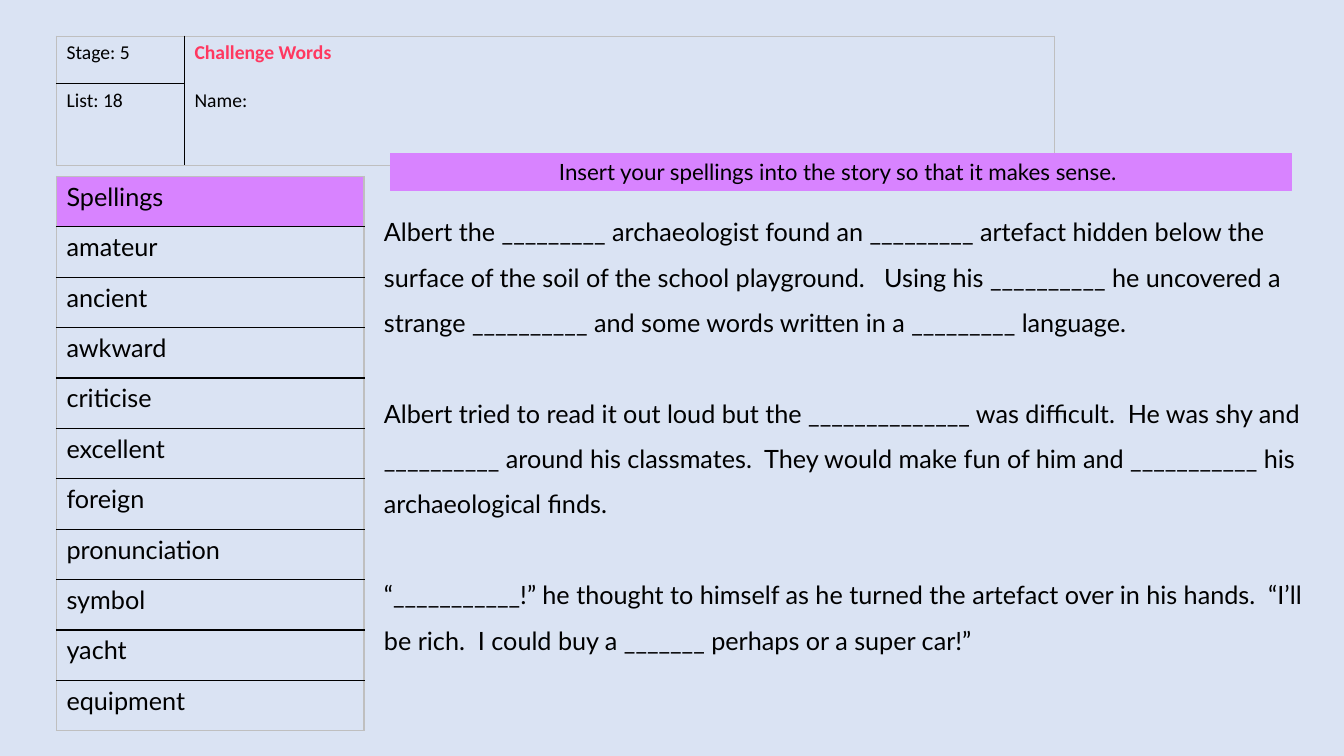
from lxml.etree import SubElement
from pptx import Presentation
from pptx.dml.color import RGBColor
from pptx.enum.shapes import MSO_SHAPE as Shape
from pptx.enum.text import MSO_ANCHOR as Anchor, PP_ALIGN as Align
from pptx.oxml import parse_xml
from pptx.oxml.ns import nsdecls, qn
from pptx.util import Inches, Pt

SPELLINGS = ["Spellings", "amateur", "ancient", "awkward", "criticise", "excellent",
             "foreign", "pronunciation", "symbol", "yacht", "equipment"]
HEADER = [["Stage: 5", "Challenge Words\nName:"], ["List: 18", ""]]
INSTRUCTION = "Insert your spellings into the story so that it makes sense. "
STORY = [
    "Albert the _________ archaeologist found an _________ artefact hidden below the surface "
    "of the soil of the school playground.   Using his __________ he uncovered a strange "
    "__________ and some words written in a _________ language.",
    "Albert tried to read it out loud but the ______________ was difficult.  He was shy and "
    "__________ around his classmates.  They would make fun of him and ___________ his "
    "archaeological finds.",
    "“___________!” he thought to himself as he turned the artefact over in his hands.  "
    "“I’ll be rich.  I could buy a _______ perhaps or a super car!”",
]

BACKGROUND = RGBColor(0xDA, 0xE3, 0xF3)
PURPLE = RGBColor(0xD8, 0x83, 0xFF)
PINK = RGBColor(0xFF, 0x38, 0x60)
BLACK = RGBColor(0, 0, 0)
GRAY = RGBColor(0xBF, 0xBF, 0xBF)


def style_text(text_frame, size, font_name):
    for paragraph in text_frame.paragraphs:
        for run in paragraph.runs:
            run.font.size = Pt(size)
            run.font.name = font_name
            run.font.color.rgb = BLACK


def set_borders(cell, colors):
    properties = cell._tc.get_or_add_tcPr()
    for index, (side, color) in enumerate(colors.items()):
        line = parse_xml(f'<a:ln{side} {nsdecls("a")} w="{Pt(1)}"/>')
        fill = SubElement(line, qn("a:solidFill"))
        SubElement(fill, qn("a:srgbClr"), val=str(color))
        properties.insert(index, line)


def add_grid(slide, left, top, widths, heights, rows, size, font_name):
    table = slide.shapes.add_table(
        len(heights), len(widths), Inches(left), Inches(top),
        Inches(sum(widths)), Inches(sum(heights))).table
    table.first_row = table.horz_banding = False
    for column, width in zip(table.columns, widths):
        column.width = Inches(width)
    for row, height in zip(table.rows, heights):
        row.height = Inches(height)
    last_row, last_column = len(heights) - 1, len(widths) - 1
    for r, texts in enumerate(rows):
        for c, text in enumerate(texts):
            cell = table.cell(r, c)
            cell.text_frame.text = text
            style_text(cell.text_frame, size, font_name)
            cell.fill.background()
            set_borders(cell, {
                "L": BLACK if c > 0 else GRAY,
                "R": BLACK if c < last_column else GRAY,
                "T": BLACK if r > 0 else GRAY,
                "B": BLACK if r < last_row else GRAY,
            })
    return table


presentation = Presentation()
presentation.slide_width, presentation.slide_height = Inches(13.33), Inches(7.5)
slide = presentation.slides.add_slide(presentation.slide_layouts[6])
slide.background.fill.solid()
slide.background.fill.fore_color.rgb = BACKGROUND

spellings = add_grid(slide, 0.56, 1.75, [3.05], [0.5] * len(SPELLINGS),
                     [[word] for word in SPELLINGS], 18, "Lato")
heading = spellings.cell(0, 0)
heading.fill.solid()
heading.fill.fore_color.rgb = PURPLE

header = add_grid(slide, 0.56, 0.36, [1.27, 8.63], [0.47, 0.81], HEADER, 14, "Calibri")
challenge = header.cell(0, 1)
challenge.merge(header.cell(1, 1))
bottom_color = challenge._tc.tcPr.find(qn("a:lnB")).find(".//" + qn("a:srgbClr"))
bottom_color.set("val", str(GRAY))
title, name = challenge.text_frame.paragraphs
title.runs[0].font.bold = True
title.runs[0].font.color.rgb = PINK
name.space_before = Pt(17)

story = slide.shapes.add_textbox(Inches(3.71), Inches(1.95), Inches(9.44), Inches(5.5))
story.text_frame.word_wrap = True
story.text_frame.text = "\n".join(STORY)
style_text(story.text_frame, 18, "Lato")
for index, paragraph in enumerate(story.text_frame.paragraphs):
    paragraph.line_spacing = 1.5
    paragraph.space_before = Pt(32.4 if index else 0)

banner = slide.shapes.add_shape(Shape.RECTANGLE, Inches(3.87), Inches(1.52),
                                Inches(8.94), Inches(0.37))
banner.shadow.inherit = False
banner.fill.solid()
banner.fill.fore_color.rgb = PURPLE
banner.line.color.rgb = PURPLE
banner.line.width = Pt(0.75)
banner.text_frame.word_wrap = True
banner.text_frame.vertical_anchor = Anchor.MIDDLE
banner.text_frame.text = INSTRUCTION
banner.text_frame.paragraphs[0].alignment = Align.CENTER
style_text(banner.text_frame, 16, "Lato")

presentation.save("out.pptx")
